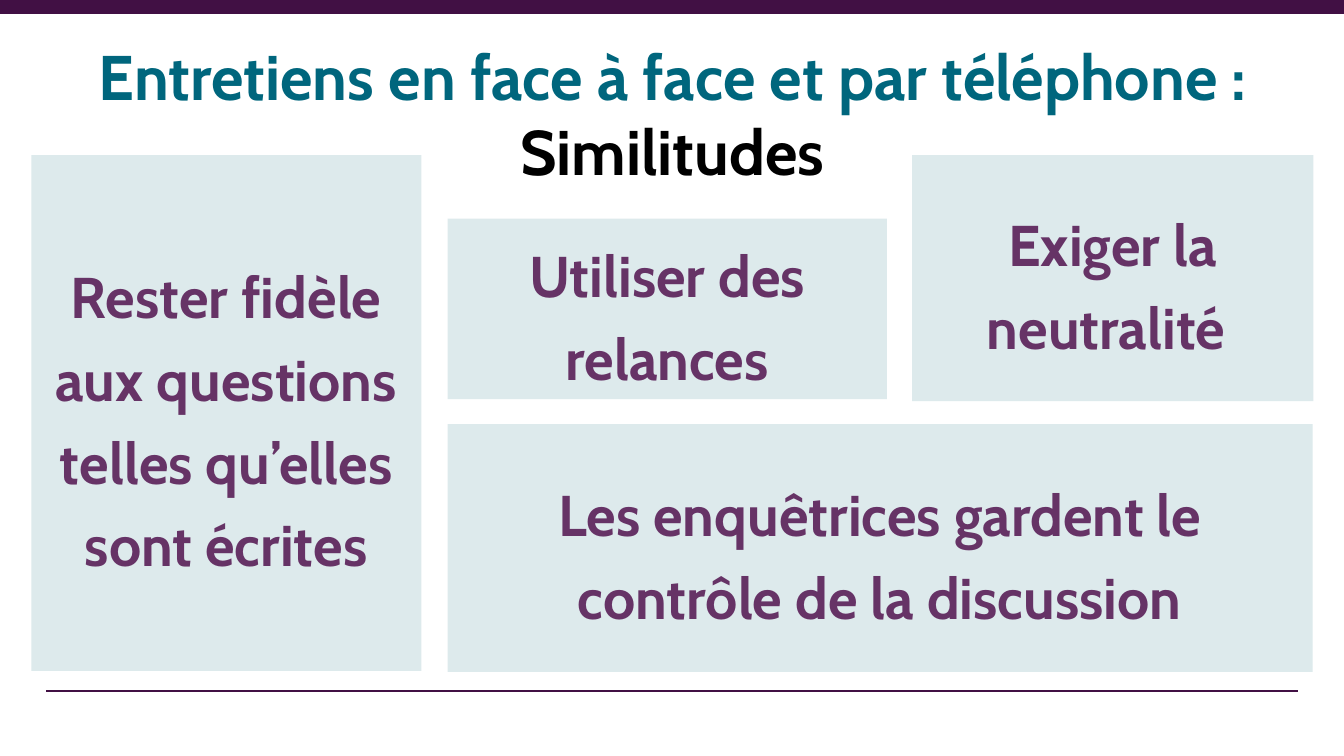
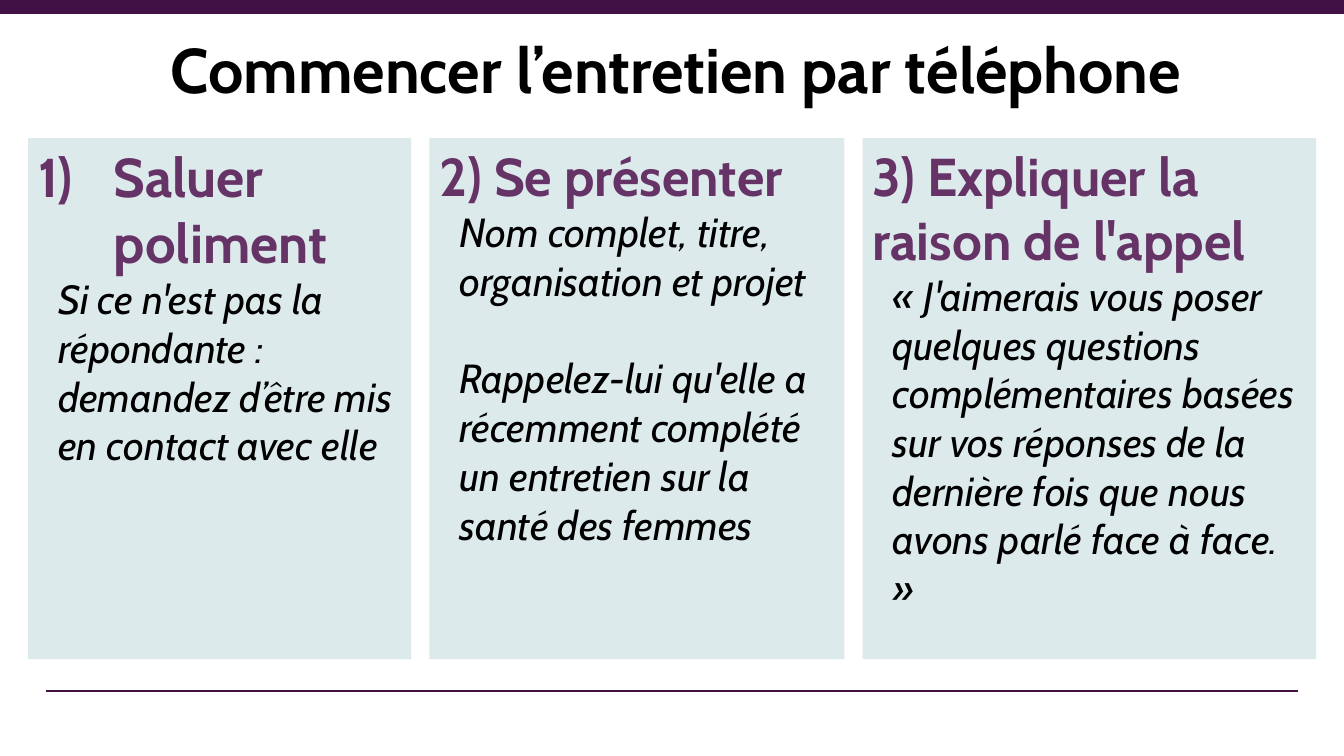
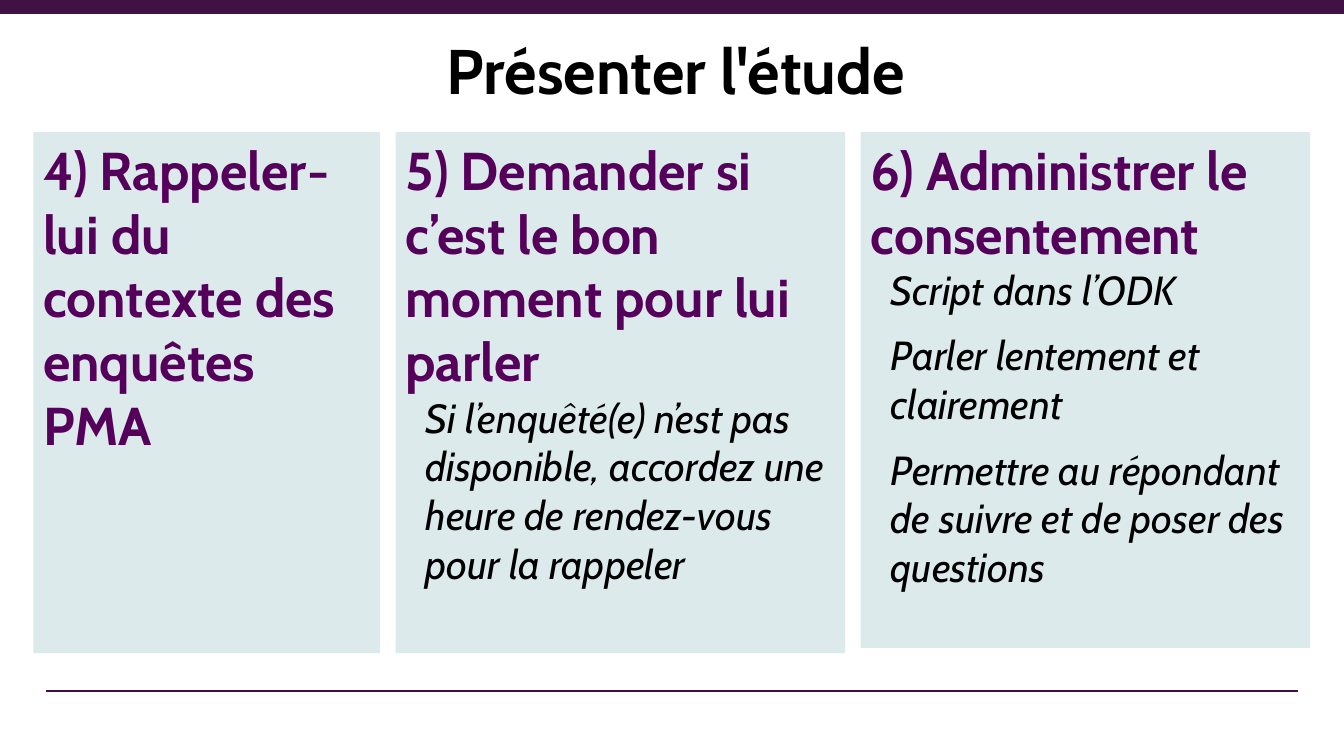
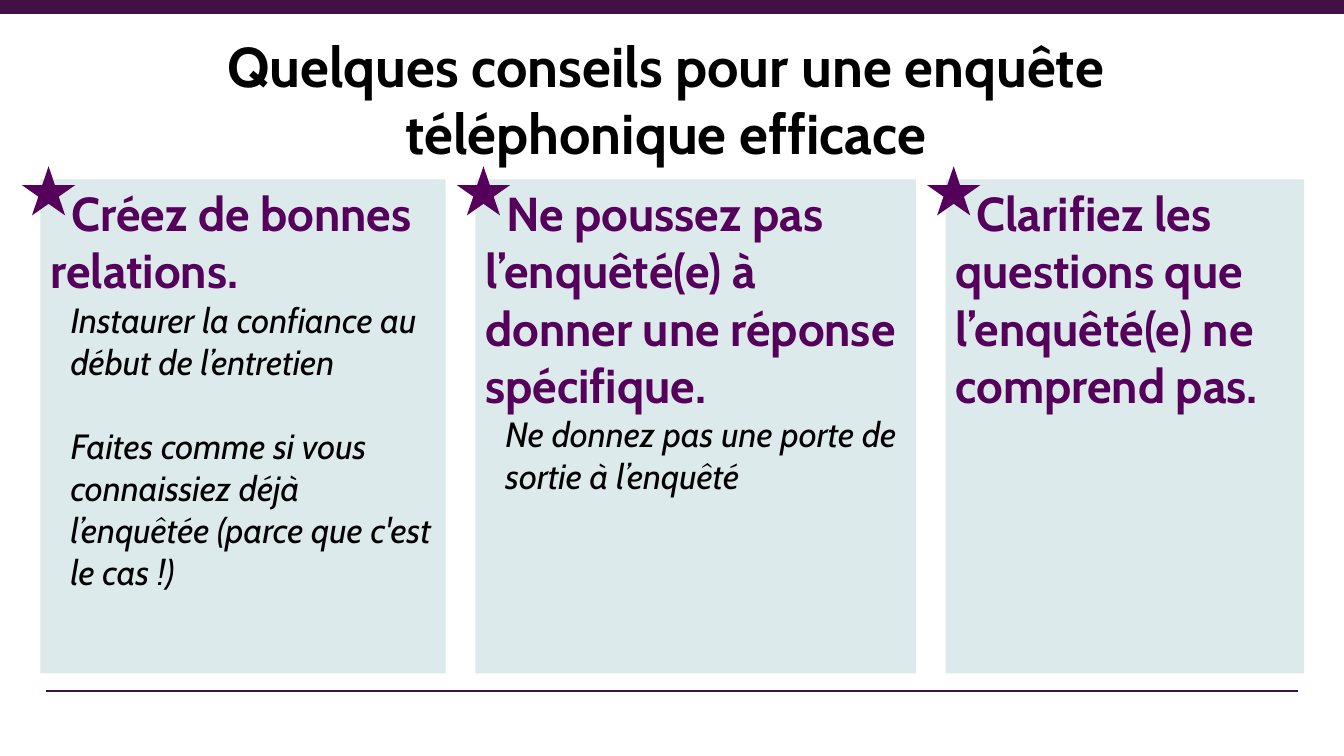
from dataclasses import dataclass, field
from typing import Any

from lxml.etree import SubElement
from pptx import Presentation
from pptx.dml.color import RGBColor
from pptx.enum.shapes import MSO_CONNECTOR, MSO_SHAPE
from pptx.enum.text import MSO_ANCHOR, PP_ALIGN
from pptx.oxml.ns import qn
from pptx.shapes.autoshape import Shape
from pptx.slide import Slide, SlideLayout
from pptx.util import Cm, Pt

FONT = "Cabin"
COLOURS = {
    "band": "411044",
    "panel": "DDEAEC",
    "plum": "663366",
    "violet": "55015B",
    "teal": "00667D",
    "black": "000000",
}
SLIDE_WIDTH, SLIDE_HEIGHT = 33.87, 19.05
DETAIL_INDENT = 0.51
NUMBER_INDENT = 1.91
STAR_WIDTH, STAR_HEIGHT = 1.35, 1.24
STAR_SHIFT_X, STAR_SHIFT_Y = -0.47, -0.33
STAR_TEXT_INDENT = 0.53


@dataclass(frozen=True)
class Frame:
    """Left, top, width and height in centimetres."""

    left: float
    top: float
    width: float
    height: float

    def lengths(self) -> tuple[Cm, Cm, Cm, Cm]:
        return Cm(self.left), Cm(self.top), Cm(self.width), Cm(self.height)


@dataclass(frozen=True)
class Para:
    text: str
    size: float
    colour: str = "black"
    bold: bool = True
    italic: bool = False
    left_indent: float = 0
    first_indent: float = 0
    numbered: bool = False
    layout: dict[str, Any] = field(default_factory=dict)


@dataclass(frozen=True)
class Column:
    width: float
    height: float
    heading: str
    details: tuple[str, ...] = ()
    numbered: bool = False


@dataclass(frozen=True)
class ColumnPage:
    title: str
    title_size: float
    title_frame: Frame
    left: float
    top: float
    gap: float
    columns: tuple[Column, ...]
    heading_colour: str
    heading_size: float
    detail_size: float
    detail_space: float = 0
    starred: bool = False


def colour(name: str) -> RGBColor:
    return RGBColor.from_string(COLOURS[name])


def set_values(target: Any, values: dict[str, Any]) -> None:
    for name, value in values.items():
        setattr(target, name, value)


def write(box: Shape, paras: list[Para], anchor: MSO_ANCHOR = MSO_ANCHOR.TOP) -> None:
    frame = box.text_frame
    set_values(frame, {"word_wrap": True, "vertical_anchor": anchor})
    for index, item in enumerate(paras):
        para = frame.add_paragraph() if index else frame.paragraphs[0]
        set_values(para, {"alignment": PP_ALIGN.LEFT, **item.layout})
        properties = para._p.get_or_add_pPr()
        properties.set("marL", str(Cm(item.left_indent)))
        properties.set("indent", str(Cm(item.first_indent)))
        if item.numbered:
            bullet_colour = SubElement(properties, qn("a:buClr"))
            SubElement(bullet_colour, qn("a:srgbClr"), val=COLOURS[item.colour])
            SubElement(properties, qn("a:buAutoNum"), type="arabicParenR")
        span = para.add_run()
        span.text = item.text
        set_values(
            span.font,
            {"name": FONT, "size": Pt(item.size), "bold": item.bold, "italic": item.italic},
        )
        span.font.color.rgb = colour(item.colour)


def add_filled(page: Slide, kind: MSO_SHAPE, frame: Frame, fill: str) -> Shape:
    shape = page.shapes.add_shape(kind, *frame.lengths())
    shape.shadow.inherit = False
    shape.fill.solid()
    shape.fill.fore_color.rgb = colour(fill)
    shape.line.fill.background()
    return shape


def add_title(page: Slide, frame: Frame, lines: list[Para]) -> None:
    write(page.shapes.add_textbox(*frame.lengths()), lines)


def centred(text: str, size: float, tint: str = "black", **layout: Any) -> Para:
    return Para(text, size, tint, layout={"alignment": PP_ALIGN.CENTER, **layout})


def add_bands(page: Slide, layout: SlideLayout) -> None:
    """Draw the top band and footer rule, then move them to the layout."""
    for left, right, height, weight in (
        (1.17, 32.72, 17.42, 1.25),
        (0, SLIDE_WIDTH, 0.18, 10.25),
    ):
        line = page.shapes.add_connector(
            MSO_CONNECTOR.STRAIGHT, Cm(left), Cm(height), Cm(right), Cm(height)
        )
        line.line.color.rgb = colour("band")
        line.line.width = Pt(weight)
        SubElement(line.element.spPr, qn("a:effectLst"))
        layout.shapes.element.append(line.element)


def build_similarities(page: Slide) -> None:
    for frame, text in (
        (Frame(0.79, 3.91, 9.83, 13), "Rester fidèle aux questions telles qu’elles sont écrites"),
        (Frame(11.28, 5.51, 11.07, 4.55), "Utiliser des relances"),
        (Frame(22.99, 3.91, 10.11, 6.2), "Exiger la neutralité "),
        (Frame(11.28, 10.69, 21.8, 6.24), "Les enquêtrices gardent le contrôle de la discussion"),
    ):
        box = add_filled(page, MSO_SHAPE.RECTANGLE, frame, "panel")
        write(box, [centred(text, 41, "plum", line_spacing=1.2)], MSO_ANCHOR.MIDDLE)
    add_title(
        page,
        Frame(0.64, 0.81, 32.61, 4.04),
        [
            centred("Entretiens en face à face et par téléphone :", 45, "teal"),
            centred("Similitudes", 45),
        ],
    )


def column_paras(column: Column, content: ColumnPage) -> list[Para]:
    first_indent = STAR_TEXT_INDENT if content.starred else 0
    heading = Para(
        column.heading,
        content.heading_size + (1 if column.numbered else 0),
        content.heading_colour,
        left_indent=NUMBER_INDENT if column.numbered else 0,
        first_indent=-NUMBER_INDENT if column.numbered else first_indent,
        numbered=column.numbered,
    )
    details = [
        Para(
            text,
            content.detail_size,
            bold=False,
            italic=True,
            left_indent=DETAIL_INDENT,
            layout={"space_before": Pt(content.detail_space if index else 0)},
        )
        for index, text in enumerate(column.details)
    ]
    return [heading, *details]


def build_columns(page: Slide, content: ColumnPage) -> None:
    add_title(page, content.title_frame, [centred(content.title, content.title_size)])
    left = content.left
    for column in content.columns:
        frame = Frame(left, content.top, column.width, column.height)
        box = add_filled(page, MSO_SHAPE.RECTANGLE, frame, "panel")
        write(box, column_paras(column, content))
        if content.starred:
            star = Frame(
                left + STAR_SHIFT_X, content.top + STAR_SHIFT_Y, STAR_WIDTH, STAR_HEIGHT
            )
            add_filled(page, MSO_SHAPE.STAR_5_POINT, star, "violet")
        left += column.width + content.gap


COLUMN_PAGES = (
    ColumnPage(
        title="Commencer l’entretien par téléphone",
        title_size=45,
        title_frame=Frame(1.65, 0.64, 30.76, 4.19),
        left=0.71,
        top=3.48,
        gap=0.46,
        heading_colour="plum",
        heading_size=38,
        detail_size=29,
        detail_space=35,
        columns=(
            Column(
                9.65,
                13.13,
                "Saluer poliment",
                ("Si ce n'est pas la répondante : demandez d’être mis en contact avec elle",),
                numbered=True,
            ),
            Column(
                10.46,
                13.13,
                "2) Se présenter",
                (
                    "Nom complet, titre, organisation et projet",
                    "Rappelez-lui qu'elle a récemment complété un entretien sur la santé des femmes",
                ),
            ),
            Column(
                11.43,
                13.13,
                "3) Expliquer la raison de l'appel",
                (
                    "« J'aimerais vous poser quelques questions complémentaires basées sur vos "
                    "réponses de la dernière fois que nous avons parlé face à face. »",
                ),
            ),
        ),
    ),
    ColumnPage(
        title="Présenter l'étude",
        title_size=45,
        title_frame=Frame(1.65, 0.66, 30.76, 1.91),
        left=0.84,
        top=3.33,
        gap=0.39,
        heading_colour="violet",
        heading_size=38,
        detail_size=29,
        detail_space=12,
        columns=(
            Column(8.74, 13.13, "4) Rappeler-lui du contexte des enquêtes PMA"),
            Column(
                11.33,
                13.13,
                "5) Demander si c’est le bon moment pour lui parler",
                (
                    "Si l’enquêté(e) n’est pas disponible, accordez une heure de rendez-vous "
                    "pour la rappeler",
                ),
            ),
            Column(
                11.33,
                13,
                "6) Administrer le consentement",
                (
                    "Script dans l’ODK",
                    "Parler lentement et clairement",
                    "Permettre au répondant de suivre et de poser des questions",
                ),
            ),
        ),
    ),
    ColumnPage(
        title="Quelques conseils pour une enquête téléphonique efficace",
        title_size=40,
        title_frame=Frame(1.4, 0.66, 30.76, 4.19),
        left=1.02,
        top=4.52,
        gap=0.75,
        heading_colour="violet",
        heading_size=34,
        detail_size=25,
        detail_space=30,
        starred=True,
        columns=(
            Column(
                10.21,
                12.45,
                "Créez de bonnes relations.",
                (
                    "Instaurer la confiance au début de l’entretien",
                    "Faites comme si vous connaissiez déjà l’enquêtée (parce que c'est le cas !)",
                ),
            ),
            Column(
                11.1,
                12.45,
                "Ne poussez pas l’enquêté(e) à donner une réponse spécifique.",
                ("Ne donnez pas une porte de sortie à l’enquêté",),
            ),
            Column(9.04, 12.45, "Clarifiez les questions que l’enquêté(e) ne comprend pas."),
        ),
    ),
)


def main() -> None:
    deck = Presentation()
    set_values(deck, {"slide_width": Cm(SLIDE_WIDTH), "slide_height": Cm(SLIDE_HEIGHT)})
    blank = deck.slide_layouts[6]
    opening = deck.slides.add_slide(blank)
    add_bands(opening, blank)
    build_similarities(opening)
    for content in COLUMN_PAGES:
        build_columns(deck.slides.add_slide(blank), content)
    deck.save("out.pptx")


if __name__ == "__main__":
    main()
